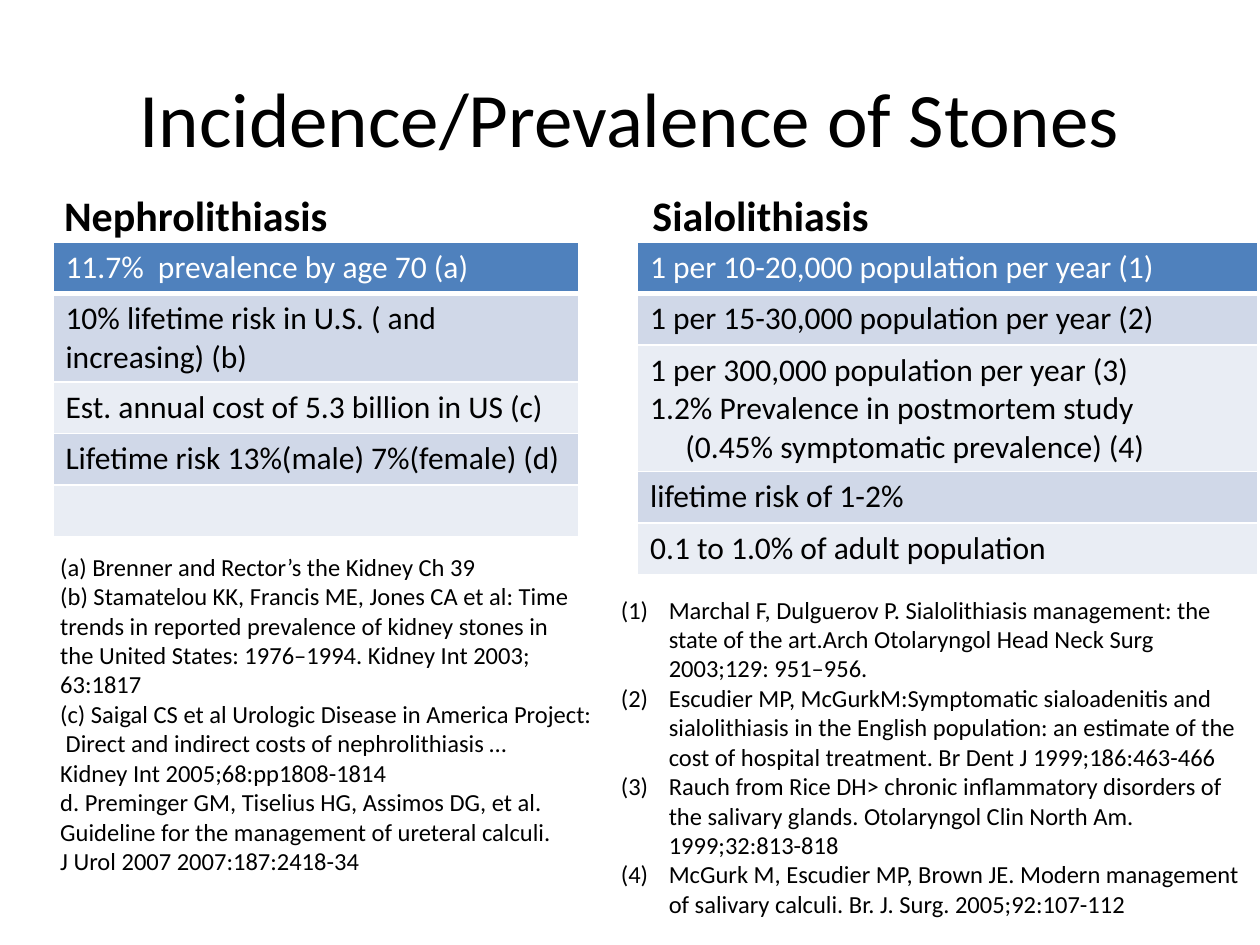
from pptx import Presentation
from pptx.dml.color import RGBColor
from pptx.enum.text import MSO_ANCHOR, PP_ALIGN
from pptx.oxml.ns import qn
from pptx.util import Inches, Pt
from lxml.etree import SubElement


def color(code):
    return RGBColor.from_string(code)


class Deck:
    font = "Calibri"
    ink = "000000"
    paper = "FFFFFF"
    head = "4F81BD"
    bands = ("E9EDF4", "D0D8E8")

    def __init__(self):
        self.file = Presentation()
        self.file.slide_width = Inches(10)
        self.file.slide_height = Inches(7.5)
        self.slide = self.file.slides.add_slide(self.file.slide_layouts[6])

    def put(self, frame, lines, size, ink=ink, bold=False, align=None):
        for i, line in enumerate(lines):
            para = frame.paragraphs[0] if i == 0 else frame.add_paragraph()
            para.alignment = align
            run = para.add_run()
            run.text = line
            run.font.name = self.font
            run.font.size = Pt(size)
            run.font.bold = bold
            run.font.color.rgb = color(ink)

    def text(self, box, lines, size, anchor=MSO_ANCHOR.TOP, wrap=True, **style):
        shape = self.slide.shapes.add_textbox(*map(Inches, box))
        frame = shape.text_frame
        frame.word_wrap = wrap
        frame.vertical_anchor = anchor
        self.put(frame, lines, size, **style)
        return frame

    def indent(self, para, left, first=0):
        props = para._p.get_or_add_pPr()
        props.set("marL", str(Inches(left)))
        props.set("indent", str(Inches(first)))
        return props

    def notes(self, box, lines, size):
        frame = self.text(box, lines, size)
        for para in frame.paragraphs:
            props = self.indent(para, 0.38, -0.38)
            SubElement(props, qn("a:buFont"), typeface=self.font)
            SubElement(props, qn("a:buAutoNum"), type="arabicParenBoth")

    def border(self, cell, base):
        props = cell._tc.get_or_add_tcPr()
        for side in "LRTB":
            width = base if side == "B" else 1
            line = SubElement(props, qn("a:ln" + side), w=str(Pt(width)))
            fill = SubElement(line, qn("a:solidFill"))
            SubElement(fill, qn("a:srgbClr"), val=self.paper)

    def table(self, left, top, width, rows, step=0.41):
        size = map(Inches, (left, top, width, step * len(rows)))
        grid = self.slide.shapes.add_table(len(rows), 1, *size).table
        for i, lines in enumerate(rows):
            grid.rows[i].height = Inches(step)
            cell = grid.cell(i, 0)
            self.border(cell, 1 if i else 3)
            cell.fill.solid()
            cell.fill.fore_color.rgb = color(self.bands[i % 2] if i else self.head)
            self.put(cell.text_frame, lines, 18, self.ink if i else self.paper)
        return grid

    def save(self):
        self.file.save("out.pptx")


def main():
    deck = Deck()
    deck.text((0.5, 0.3, 9, 1.25), ["Incidence/Prevalence of Stones"], 44,
              MSO_ANCHOR.MIDDLE, align=PP_ALIGN.CENTER)
    for left, name in ((0.41, "Nephrolithiasis"), (5.08, "Sialolithiasis")):
        deck.text((left, 1.25, 4.42, 0.7), [name], 24, MSO_ANCHOR.BOTTOM, bold=True)

    deck.table(0.42, 1.92, 4.17, [
        ["11.7%  prevalence by age 70 (a)"],
        ["10% lifetime risk in U.S. ( and increasing) (b)"],
        ["Est. annual cost of 5.3 billion in US (c)"],
        ["Lifetime risk 13%(male) 7%(female) (d)"],
        [],
    ])
    grid = deck.table(5.06, 1.92, 4.92, [
        ["1 per 10-20,000 population per year (1)"],
        ["1 per 15-30,000 population per year (2)"],
        ["1 per 300,000 population per year (3)",
         "1.2% Prevalence in postmortem study",
         "(0.45% symptomatic prevalence) (4)"],
        ["lifetime risk of 1-2%"],
        ["0.1 to 1.0% of adult population"],
    ])
    deck.indent(grid.cell(2, 0).text_frame.paragraphs[2], 0.28)

    deck.notes((4.83, 4.67, 5.17, 2.69), [
        "Marchal F, Dulguerov P. Sialolithiasis management: the state of the art."
        "Arch Otolaryngol Head Neck Surg 2003;129: 951–956.",
        "Escudier MP, McGurkM:Symptomatic sialoadenitis and sialolithiasis in the "
        "English population: an estimate of the cost of hospital treatment. "
        "Br Dent J 1999;186:463-466",
        "Rauch from Rice DH> chronic inflammatory disorders of the salivary glands. "
        "Otolaryngol Clin North Am. 1999;32:813-818",
        "McGurk M, Escudier MP, Brown JE. Modern management of salivary calculi. "
        "Br. J. Surg. 2005;92:107-112",
    ], 14)
    deck.text((0.38, 4.33, 4.46, 2.69), [
        "(a) Brenner and Rector’s the Kidney Ch 39",
        "(b) Stamatelou KK, Francis ME, Jones CA et al: Time",
        "trends in reported prevalence of kidney stones in",
        "the United States: 1976–1994. Kidney Int 2003;",
        "63:1817",
        "(c) Saigal CS et al Urologic Disease in America Project:",
        " Direct and indirect costs of nephrolithiasis …",
        "Kidney Int 2005;68:pp1808-1814",
        "d. Preminger GM, Tiselius HG, Assimos DG, et al.",
        "Guideline for the management of ureteral calculi.",
        "J Urol 2007 2007:187:2418-34",
    ], 14, wrap=False)
    deck.save()


if __name__ == "__main__":
    main()
